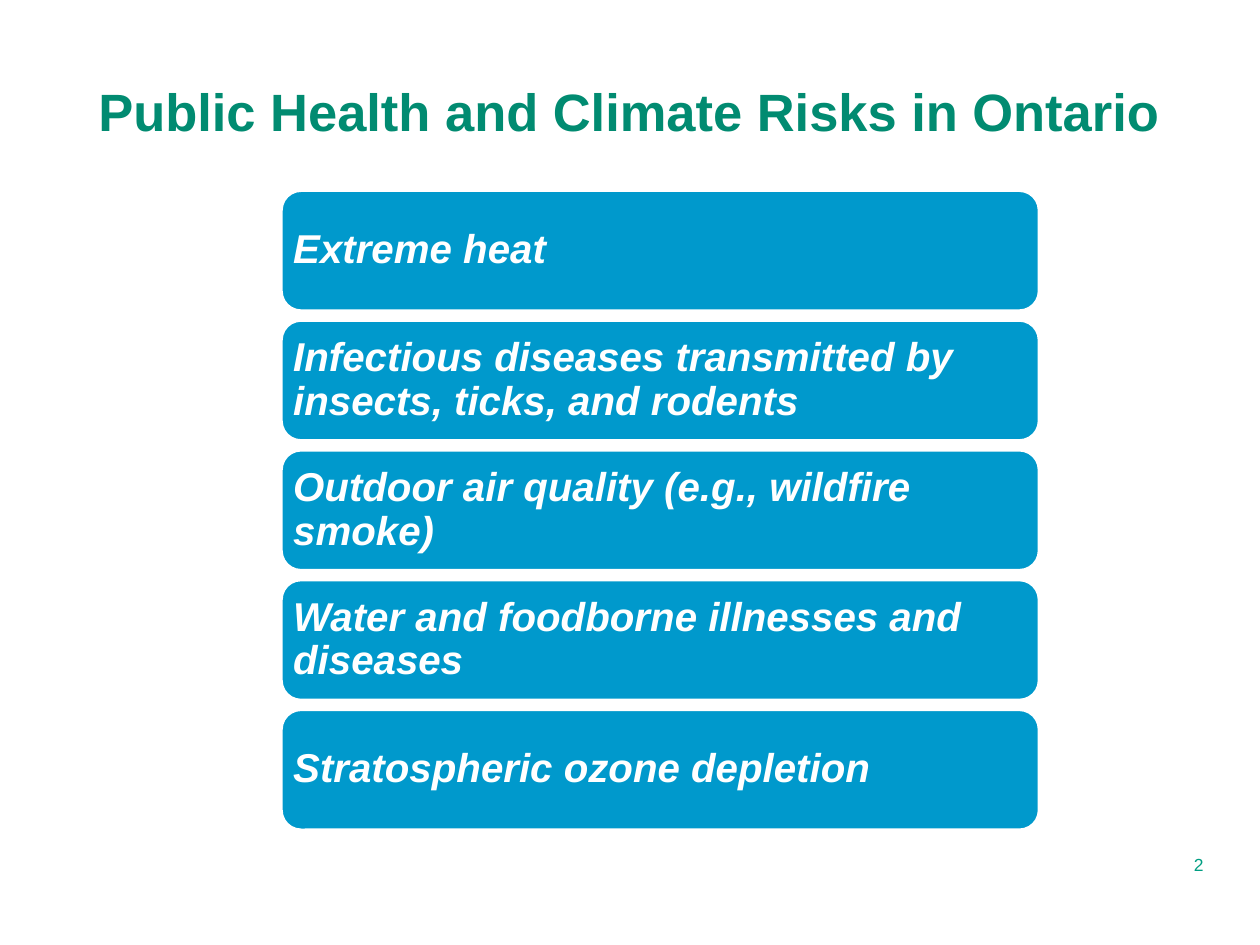
"""Build the slide on public health and climate risks in Ontario."""
import pptx
import pptx.dml.color
import pptx.enum.shapes
import pptx.enum.text
import pptx.util

Inches = pptx.util.Inches
Pt = pptx.util.Pt
ALIGN = pptx.enum.text.PP_ALIGN
MIDDLE = pptx.enum.text.MSO_ANCHOR.MIDDLE

TITLE = "Public Health and Climate Risks in Ontario"
RISKS = [
    "Extreme heat",
    "Infectious diseases transmitted by insects, ticks, and rodents",
    "Outdoor air quality (e.g., wildfire smoke)",
    "Water and foodborne illnesses and diseases",
    "Stratospheric ozone depletion",
]
PAGE_NUMBER = "2"
BAR_LEFT, BAR_TOP, BAR_WIDTH, BAR_HEIGHT = 2.23, 1.51, 6.02, 0.96
BAR_STEP = 1.03


def color(value):
    return pptx.dml.color.RGBColor.from_string(value)


def write(shape, text, size, fill, align, bold=False, italic=False):
    frame = shape.text_frame
    frame.word_wrap = True
    frame.text = text
    para = frame.paragraphs[0]
    para.alignment = align
    para.font.name = "Arial"
    para.font.size = Pt(size)
    para.font.bold = bold
    para.font.italic = italic
    para.font.color.rgb = color(fill)
    return frame


def add_bar(page, index, text):
    bar = page.shapes.add_shape(
        pptx.enum.shapes.MSO_SHAPE.ROUNDED_RECTANGLE,
        Inches(BAR_LEFT), Inches(BAR_TOP + index * BAR_STEP),
        Inches(BAR_WIDTH), Inches(BAR_HEIGHT))
    bar.shadow.inherit = False
    bar.fill.solid()
    bar.fill.fore_color.rgb = color("0099CC")
    bar.line.color.rgb = color("FFFFFF")
    bar.line.width = Pt(2)
    frame = write(bar, text, 23, "FFFFFF", ALIGN.LEFT, bold=True, italic=True)
    frame.vertical_anchor = MIDDLE
    frame.margin_left = frame.margin_right = Inches(0.05)
    frame.margin_top = frame.margin_bottom = Inches(0.05)
    frame.paragraphs[0].line_spacing = 0.9


def main():
    deck = pptx.Presentation()
    deck.slide_width, deck.slide_height = Inches(10), Inches(7.5)
    page = deck.slides.add_slide(deck.slide_layouts[5])

    title = page.shapes.title
    title.left, title.top = Inches(0.47), Inches(0)
    title.width, title.height = Inches(9.05), Inches(1.75)
    frame = write(title, TITLE, 30, "018B71", ALIGN.CENTER, bold=True)
    frame.vertical_anchor = MIDDLE

    for index, risk in enumerate(RISKS):
        add_bar(page, index, risk)

    number = page.shapes.add_textbox(
        Inches(8.75), Inches(6.73), Inches(0.9), Inches(0.27))
    write(number, PAGE_NUMBER, 10, "009E82", ALIGN.RIGHT)

    deck.save("out.pptx")


if __name__ == "__main__":
    main()
